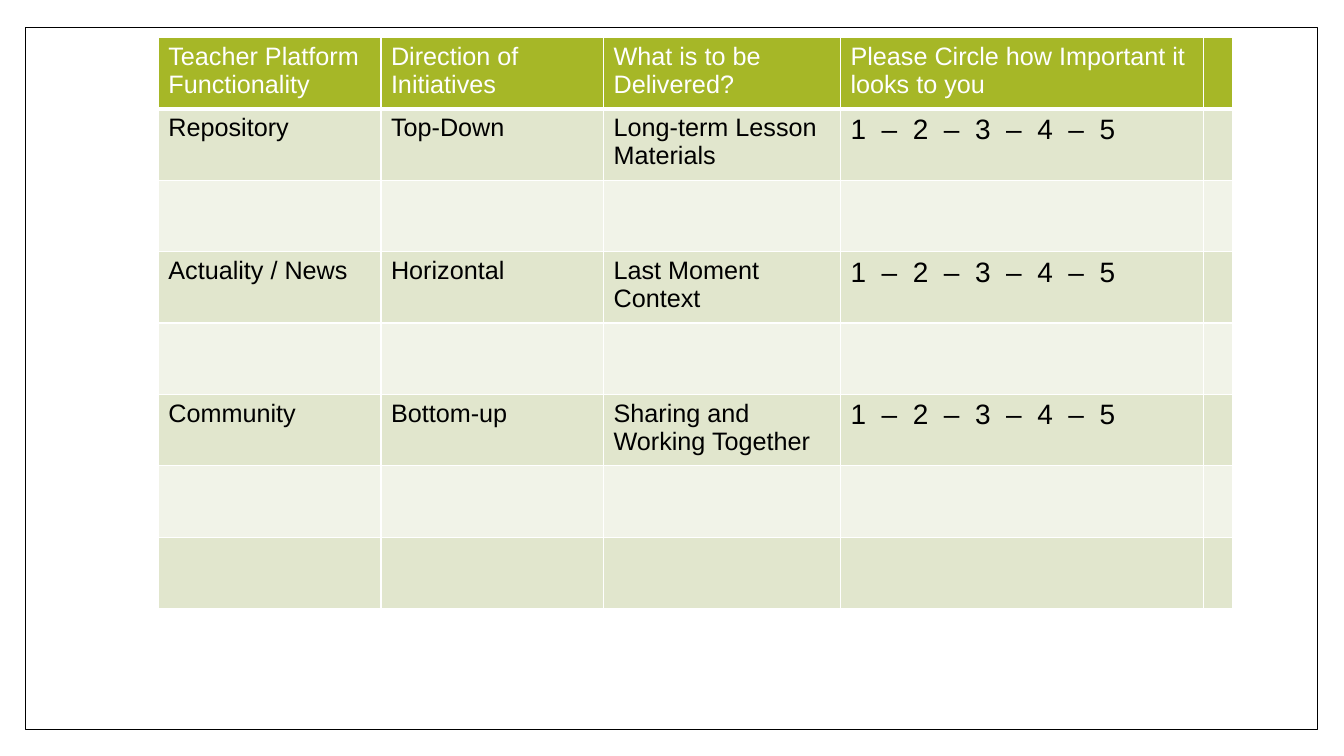
from lxml.etree import SubElement
from pptx import Presentation
from pptx.dml.color import RGBColor
from pptx.enum.shapes import MSO_SHAPE
from pptx.enum.text import PP_ALIGN
from pptx.oxml.ns import qn
from pptx.util import Cm, Pt

BLACK = RGBColor(0x00, 0x00, 0x00)
WHITE = RGBColor(0xFF, 0xFF, 0xFF)
GREEN = RGBColor(0xA6, 0xB7, 0x27)
BAND_DARK = RGBColor(0xE1, 0xE6, 0xCD)
BAND_LIGHT = RGBColor(0xF1, 0xF3, 0xE8)

HEADER = {"name": "Arial", "size": Pt(18), "bold": False, "color": WHITE}
BODY = {**HEADER, "color": BLACK}
RATING = {**BODY, "size": Pt(20)}

SCALE = "  –  ".join("12345") + " "
COLUMN_WIDTHS = [5.61, 5.61, 5.97, 9.14, 0.74]
ROW_HEIGHT = 1.8
ROWS = [
    ["Teacher Platform Functionality", "Direction of Initiatives",
     "What is to be Delivered?", "Please Circle how Important it looks to you", ""],
    ["Repository", "Top-Down", "Long-term Lesson Materials", SCALE, ""],
    [""] * 5,
    ["Actuality / News", "Horizontal", "Last Moment Context", SCALE, ""],
    [""] * 5,
    ["Community", "Bottom-up", "Sharing and Working Together", SCALE, ""],
    [""] * 5,
    [""] * 5,
]


class SlideBuilder:
    def __init__(self, slide, border_color):
        self.slide = slide
        self.border_color = border_color

    def frame(self, left, top, width, height):
        sp = self.slide.shapes.add_shape(
            MSO_SHAPE.RECTANGLE, Cm(left), Cm(top), Cm(width), Cm(height))
        sp.shadow.inherit = False
        sp.fill.solid()
        sp.fill.fore_color.rgb = WHITE
        sp.line.color.rgb = BLACK
        sp.line.width = Pt(1)

    def table(self, left, top, widths, row_height, rows):
        tbl = self.slide.shapes.add_table(
            len(rows), len(widths), Cm(left), Cm(top),
            Cm(sum(widths)), Cm(row_height * len(rows))).table
        tbl.first_row = tbl.horz_banding = False
        for column, width in zip(tbl.columns, widths):
            column.width = Cm(width)
        for i, texts in enumerate(rows):
            tbl.rows[i].height = Cm(row_height)
            fill = GREEN if i == 0 else BAND_DARK if i % 2 else BAND_LIGHT
            widths_pt = {"L": 1, "R": 1, "T": 3 if i == 1 else 1, "B": 3 if i == 0 else 1}
            for j, text in enumerate(texts):
                cell = tbl.cell(i, j)
                self.borders(cell, widths_pt)
                cell.fill.solid()
                cell.fill.fore_color.rgb = fill
                fmt = HEADER if i == 0 else RATING if text == SCALE else BODY
                self.text(cell.text_frame, text, fmt)

    def borders(self, cell, widths_pt):
        tcPr = cell._tc.get_or_add_tcPr()
        for side, width in widths_pt.items():
            ln = SubElement(tcPr, qn(f"a:ln{side}"), w=str(Pt(width)))
            solid = SubElement(ln, qn("a:solidFill"))
            SubElement(solid, qn("a:srgbClr"), val=str(self.border_color))

    def text(self, tf, text, fmt):
        if not text:
            return
        p = tf.paragraphs[0]
        if text == SCALE:
            p.alignment = PP_ALIGN.JUSTIFY
        r = p.add_run()
        r.text = text
        for key, value in fmt.items():
            if key == "color":
                r.font.color.rgb = value
            else:
                setattr(r.font, key, value)


def main():
    prs = Presentation()
    prs.slide_width, prs.slide_height = Cm(33.87), Cm(19.05)
    s = SlideBuilder(prs.slides.add_slide(prs.slide_layouts[6]), WHITE)
    s.frame(0.64, 0.69, 32.56, 17.7)
    s.table(3.99, 0.94, COLUMN_WIDTHS, ROW_HEIGHT, ROWS)
    prs.save("out.pptx")


if __name__ == "__main__":
    main()
